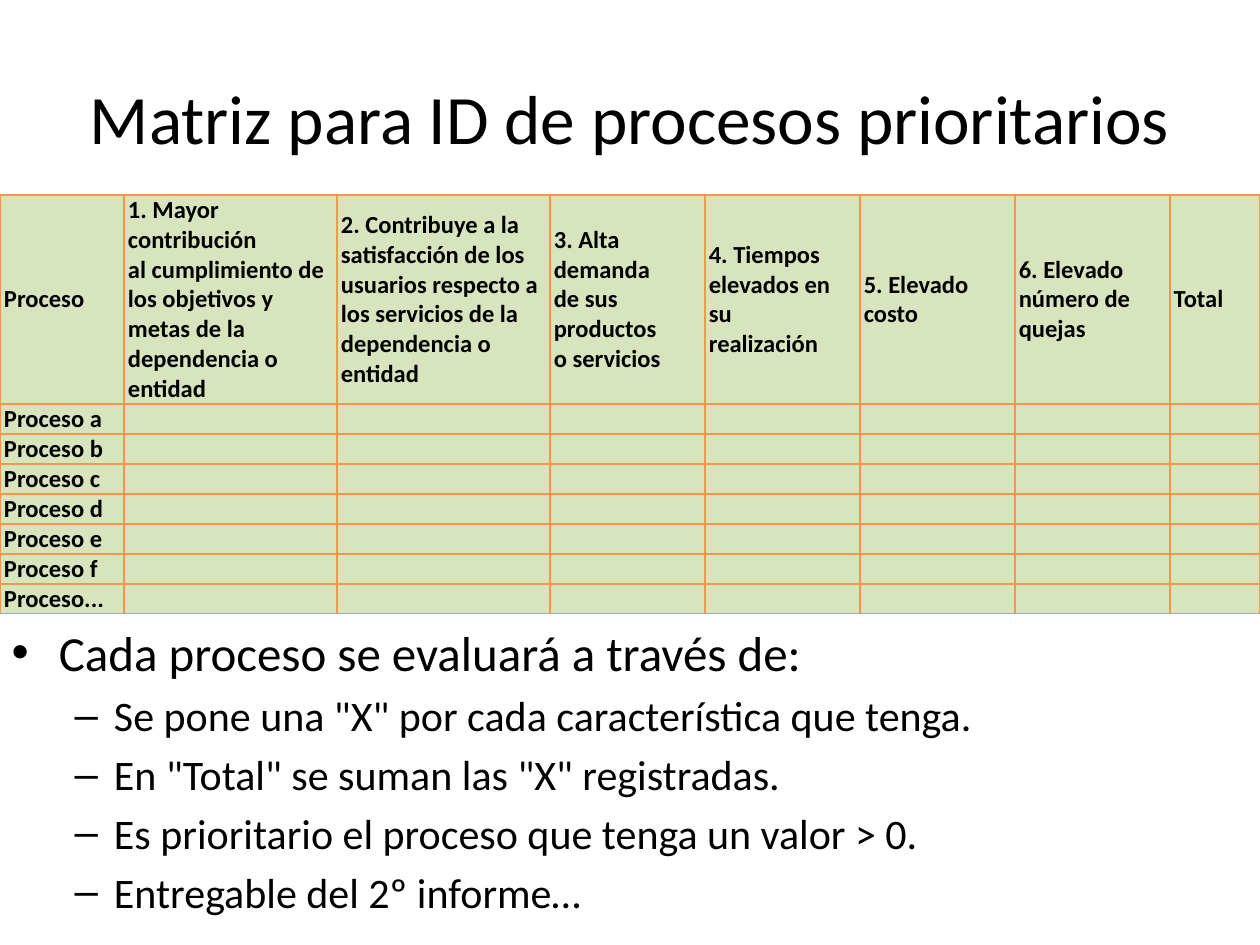
import pptx
import pptx.dml.color
import pptx.enum.text
import pptx.oxml
import pptx.oxml.ns
import pptx.util
from lxml import etree

RGBColor = pptx.dml.color.RGBColor
Anchor = pptx.enum.text.MSO_ANCHOR
qn = pptx.oxml.ns.qn

BLACK = RGBColor(0x00, 0x00, 0x00)
PALE_GREEN = RGBColor(0xD7, 0xE4, 0xBD)
ORANGE = RGBColor(0xF7, 0x96, 0x46)
FONT = "Calibri"
CELL_SIZE = 14
PX_PER_INCH = 126

TITLE = "Matriz para ID de procesos prioritarios"
# In a heading, \v is a line break and \n starts a new paragraph.
HEADINGS = [
    "Proceso",
    "1. Mayor contribución\val cumplimiento de los objetivos y metas de la"
    "\vdependencia o entidad",
    "2. Contribuye a la\vsatisfacción de los\n"
    "usuarios respecto a los servicios de la\ndependencia o entidad",
    "3. Alta demanda\vde sus productos\vo servicios",
    "4. Tiempos\velevados en su\vrealización",
    "5. Elevado costo",
    "6. Elevado\vnúmero de\vquejas",
    "Total",
]
PROCESSES = [f"Proceso {letter}" for letter in "abcdef"] + ["Proceso..."]
COLUMN_WIDTHS = [124, 213, 213, 155, 155, 155, 155, 90]
HEADING_HEIGHT = 209
ROW_HEIGHT = 30
CRITERIA = [
    (0, "Cada proceso se evaluará a través de:"),
    (1, 'Se pone una "X" por cada característica que tenga.'),
    (1, 'En "Total" se suman las "X" registradas.'),
    (1, "Es prioritario el proceso que tenga un valor > 0."),
    (1, "Entregable del 2º informe…"),
]
LEVEL_SIZES = [28, 24]


def px(length):
    return pptx.util.Emu(round(length * 914400 / PX_PER_INCH))


def place(shape, box):
    shape.left, shape.top, shape.width, shape.height = map(px, box)


def format_runs(para, size, bold=None):
    for span in para.runs:
        span.font.name = FONT
        span.font.size = pptx.util.Pt(size)
        span.font.bold = bold
        span.font.color.rgb = BLACK


def prepare_frame(shape):
    frame = shape.text_frame
    frame.word_wrap = True
    frame.auto_size = pptx.enum.text.MSO_AUTO_SIZE.NONE
    frame.vertical_anchor = Anchor.MIDDLE
    return frame


def add_title(page, box):
    title = page.shapes.title
    place(title, box)
    frame = prepare_frame(title)
    frame.text = TITLE
    frame.paragraphs[0].alignment = pptx.enum.text.PP_ALIGN.CENTER
    format_runs(frame.paragraphs[0], 39.6)


def set_borders(cell):
    properties = cell._tc.get_or_add_tcPr()
    for position, side in enumerate(("a:lnL", "a:lnR", "a:lnT", "a:lnB")):
        line = etree.Element(qn(side), w=str(pptx.util.Pt(1)))
        fill = etree.SubElement(line, qn("a:solidFill"))
        etree.SubElement(fill, qn("a:srgbClr"), val=str(ORANGE))
        properties.insert(position, line)


def fill_cell(cell, text, anchor):
    cell.margin_left = cell.margin_right = px(4)
    cell.margin_top = cell.margin_bottom = 0
    cell.vertical_anchor = anchor
    cell.fill.solid()
    cell.fill.fore_color.rgb = PALE_GREEN
    set_borders(cell)
    cell.text_frame.text = text
    for para in cell.text_frame.paragraphs:
        format_runs(para, CELL_SIZE, bold=True)
        # Breaks and empty cells need the text size too, to keep rows low
        size = str(CELL_SIZE * 100)
        for line_break in para._p.findall(qn("a:br")):
            etree.SubElement(line_break, qn("a:rPr"), sz=size)
        etree.SubElement(para._p, qn("a:endParaRPr"), sz=size)


def add_matrix(page, box):
    rows = [HEADINGS]
    rows += [[name] + [""] * (len(HEADINGS) - 1) for name in PROCESSES]
    table = page.shapes.add_table(len(rows), len(HEADINGS), *map(px, box)).table
    table.first_row = False
    table.horz_banding = False
    for column, width in zip(table.columns, COLUMN_WIDTHS):
        column.width = px(width)
    for row_index, texts in enumerate(rows):
        is_heading = row_index == 0
        table.rows[row_index].height = px(HEADING_HEIGHT if is_heading else ROW_HEIGHT)
        anchor = Anchor.MIDDLE if is_heading else Anchor.TOP
        for column_index, text in enumerate(texts):
            fill_cell(table.cell(row_index, column_index), text, anchor)


def add_criteria(page, box):
    body = page.placeholders[1]
    place(body, box)
    frame = prepare_frame(body)
    frame.text = "\n".join(text for _, text in CRITERIA)
    # Bullets, indents and spacing come from the template's list levels
    for para, (level, _) in zip(frame.paragraphs, CRITERIA):
        para.level = level
        format_runs(para, LEVEL_SIZES[level])
    frame.paragraphs[0].space_before = pptx.util.Pt(0)


def main():
    deck = pptx.Presentation()
    deck.slide_width = px(1260)
    deck.slide_height = px(945)
    page = deck.slides.add_slide(deck.slide_layouts[1])
    add_title(page, (63, 38, 1134, 157))
    matrix_height = HEADING_HEIGHT + ROW_HEIGHT * len(PROCESSES)
    add_matrix(page, (0, 195, sum(COLUMN_WIDTHS), matrix_height))
    add_criteria(page, (-1, 626, 1260, 287))
    deck.save("out.pptx")


if __name__ == "__main__":
    main()
